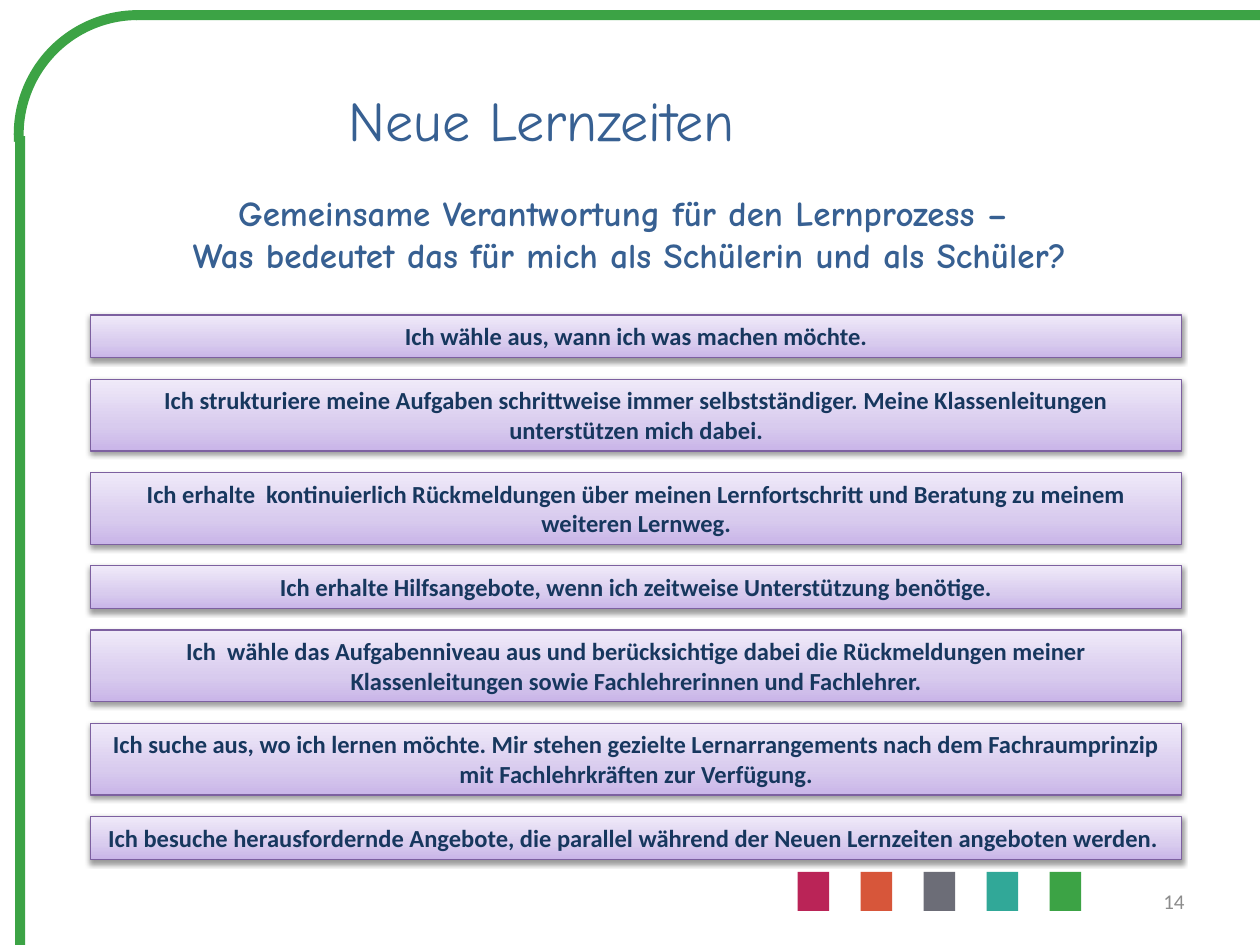
from pptx import Presentation
from pptx.dml.color import RGBColor
from pptx.enum.shapes import MSO_SHAPE
from pptx.enum.text import MSO_ANCHOR, PP_ALIGN
from pptx.oxml import parse_xml
from pptx.oxml.ns import nsdecls
from pptx.util import Inches, Pt

TITLE = "Neue Lernzeiten "
SUBTITLE = [
    "Gemeinsame Verantwortung für den Lernprozess – ",
    "Was bedeutet das für mich als Schülerin und als Schüler?",
]
STATEMENTS = [
    ("Ich wähle aus, wann ich was machen möchte.", 1),
    ("Ich strukturiere meine Aufgaben schrittweise immer selbstständiger. "
     "Meine Klassenleitungen unterstützen mich dabei.", 2),
    ("Ich erhalte  kontinuierlich Rückmeldungen über meinen Lernfortschritt "
     "und Beratung zu meinem weiteren Lernweg.", 2),
    ("Ich erhalte Hilfsangebote, wenn ich zeitweise Unterstützung benötige.", 1),
    ("Ich  wähle das Aufgabenniveau aus und berücksichtige dabei die Rückmeldungen "
     "meiner Klassenleitungen sowie Fachlehrerinnen und Fachlehrer.", 2),
    ("Ich suche aus, wo ich lernen möchte. Mir stehen gezielte Lernarrangements "
     "nach dem Fachraumprinzip mit Fachlehrkräften zur Verfügung.", 2),
    ("Ich besuche herausfordernde Angebote, die parallel während der "
     "Neuen Lernzeiten angeboten werden. ", 1),
]
PAGE = "14"
GREEN, BLUE, NAVY, PURPLE, GREY = "3CA345", "376092", "17375E", "7D60A0", "8C8C8C"
SQUARES = ["BA2457", "D7563A", "6C6D77", "31A898", GREEN]
STOPS = [(0, "C9B5E8"), (35, "D8CBEE"), (100, "F0EAF9")]
ROW_HEIGHTS = {1: 0.34, 2: 0.57}
ROW_GAP = 0.17


def rgb(color):
    return RGBColor.from_string(color)


def write(shape, lines, size, color, font="Calibri", bold=False,
          align=PP_ALIGN.CENTER, anchor=MSO_ANCHOR.TOP):
    tf = shape.text_frame
    tf.word_wrap = True
    tf.vertical_anchor = anchor
    for i, line in enumerate(lines):
        p = tf.add_paragraph() if i else tf.paragraphs[0]
        p.alignment = align
        r = p.add_run()
        r.text = line
        r.font.name, r.font.size, r.font.bold = font, Pt(size), bold
        r.font.color.rgb = rgb(color)


def add_text(s, box, lines, size, color, **fmt):
    write(s.shapes.add_textbox(*map(Inches, box)), lines, size, color, **fmt)


def add_solid(s, box, color, kind=MSO_SHAPE.RECTANGLE):
    sp = s.shapes.add_shape(kind, *map(Inches, box))
    sp.shadow.inherit = False
    sp.fill.solid()
    sp.fill.fore_color.rgb = rgb(color)
    sp.line.fill.background()
    return sp


def add_statement(s, box, text):
    sp = s.shapes.add_shape(MSO_SHAPE.RECTANGLE, *map(Inches, box))
    sp.line.color.rgb = rgb(PURPLE)
    sp.line.width = Pt(0.75)
    stops = "".join(f'<a:gs pos="{pos * 1000}"><a:srgbClr val="{color}"/></a:gs>'
                    for pos, color in STOPS)
    ln = sp.line._get_or_add_ln()
    ln.addprevious(parse_xml(
        f'<a:gradFill {nsdecls("a")} rotWithShape="1"><a:gsLst>{stops}</a:gsLst>'
        '<a:lin ang="16200000" scaled="0"/></a:gradFill>'))
    ln.addnext(parse_xml(
        f'<a:effectLst {nsdecls("a")}><a:outerShdw blurRad="40000" dist="20000" '
        'dir="5400000" rotWithShape="0"><a:srgbClr val="000000"><a:alpha val="38000"/>'
        '</a:srgbClr></a:outerShdw></a:effectLst>'))
    write(sp, [text], 14, NAVY, bold=True)


def add_frame(s):
    arc = add_solid(s, (0.11, 0.08, 1.97, 1.97), GREEN, MSO_SHAPE.BLOCK_ARC)
    arc.rotation = 270
    for i, value in enumerate((159.91, 215.7, 0.04)):
        arc.adjustments[i] = value
    add_solid(s, (0.12, 1.08, 0.08, 6.42), GREEN)
    add_solid(s, (1.08, 0.08, 8.92, 0.08), GREEN)


def main():
    """Build the slide on the new learning times."""
    prs = Presentation()
    prs.slide_width, prs.slide_height = Inches(10), Inches(7.5)
    s = prs.slides.add_slide(prs.slide_layouts[5])
    add_frame(s)
    for i, color in enumerate(SQUARES):
        add_solid(s, (6.33 + 0.5 * i, 6.92, 0.25, 0.31), color)
    title = s.shapes.title
    title.left, title.top, title.width, title.height = map(Inches, (0.79, 0.63, 7.17, 0.64))
    write(title, [TITLE], 32, BLUE, font="Comic Neue")
    add_text(s, (0.67, 1.47, 8.66, 0.77), SUBTITLE, 20, BLUE, font="Comic Neue", bold=True)
    top = 2.5
    for text, lines in STATEMENTS:
        height = ROW_HEIGHTS[lines]
        add_statement(s, (0.72, top, 8.66, height), text)
        top += height + ROW_GAP
    add_text(s, (7.17, 6.95, 2.33, 0.4), [PAGE], 12, GREY,
             align=PP_ALIGN.RIGHT, anchor=MSO_ANCHOR.MIDDLE)
    prs.save("out.pptx")


if __name__ == "__main__":
    main()
